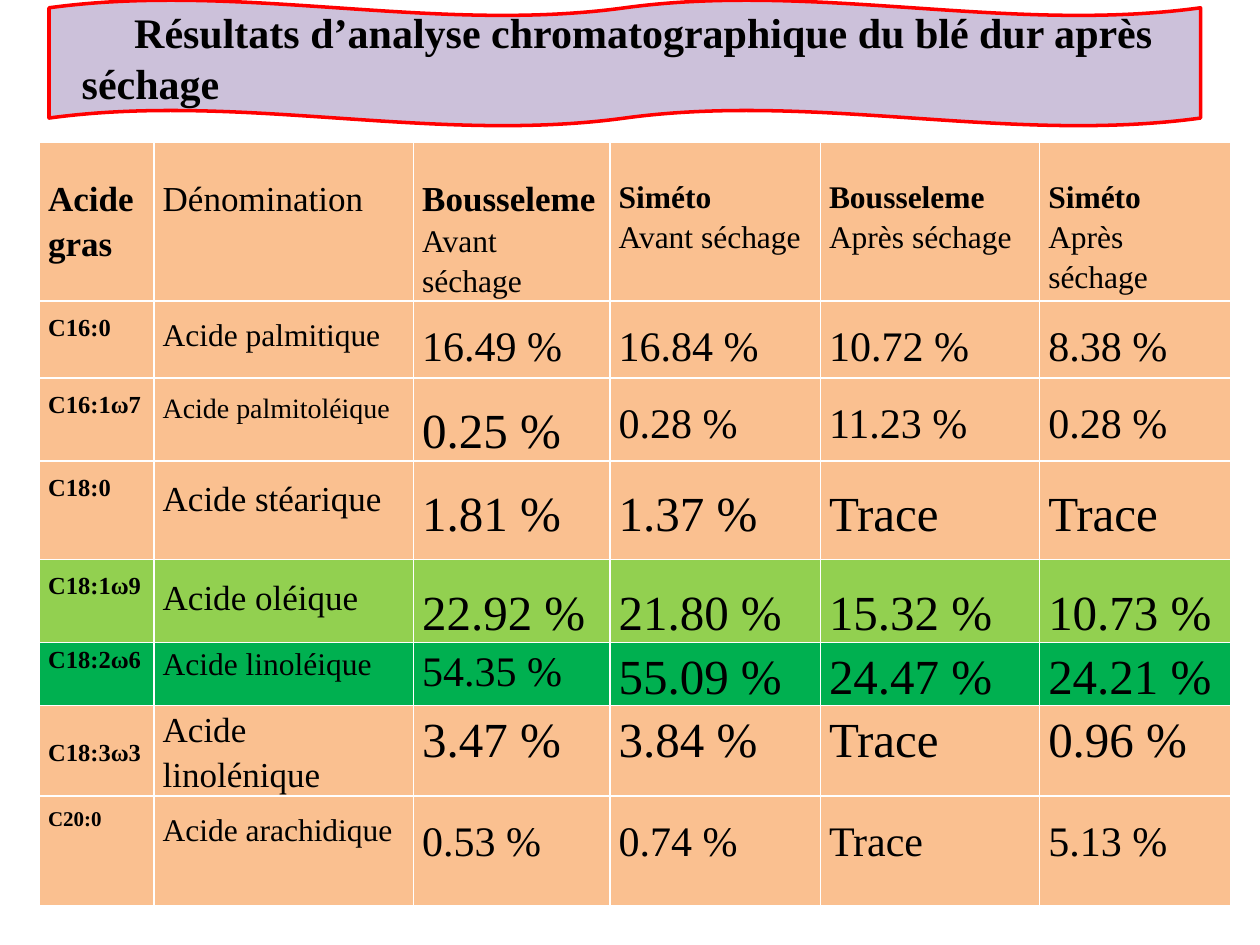
from lxml import etree
from pptx import Presentation
from pptx.dml.color import RGBColor
from pptx.enum.shapes import MSO_SHAPE
from pptx.enum.text import MSO_ANCHOR, MSO_AUTO_SIZE, PP_ALIGN
from pptx.oxml.ns import qn
from pptx.util import Pt

DOUBLE_WAVE = MSO_SHAPE.DOUBLE_WAVE
TOP, MIDDLE = MSO_ANCHOR.TOP, MSO_ANCHOR.MIDDLE
LEFT, JUSTIFY = PP_ALIGN.LEFT, PP_ALIGN.JUSTIFY
NO_AUTOFIT = MSO_AUTO_SIZE.NONE
TITLE_ONLY = 5

FONT = "Times New Roman"
COLORS = {
    "text": "000000",
    "border": "FFFFFF",
    "banner": "CCC1DA",
    "banner_line": "FF0000",
    "peach": "FAC090",
    "light_green": "92D050",
    "green": "00B050",
}

COLUMN_WIDTHS = [65.5, 148.3, 112.3, 120.2, 125.3, 109.4]
HEADER_HEIGHT = 90.7
HEADER_TOP_MARGIN = 18.5
# Each header cell holds lines of (text, size, bold).
HEADERS = [
    [("Acide gras", 20, True)],
    [("Dénomination", 20, False)],
    [("Bousseleme", 20, True), ("Avant séchage", 18, False)],
    [("Siméto", 18, True), ("Avant séchage", 18, False)],
    [("Bousseleme", 18, True), ("Après séchage", 18, False)],
    [("Siméto", 18, True), ("Après séchage", 18, False)],
]
# Height, fill, line spacing, texts, text sizes.
ROWS = [
    (43.9, "peach", 1.5,
     ["C16:0", "Acide palmitique", "16.49 %", "16.84 %", "10.72 %", "8.38 %"],
     [14, 18, 24, 24, 24, 24]),
    (47.5, "peach", 1.5,
     ["C16:1ω7", "Acide palmitoléique", "0.25 %", "0.28 %", "11.23 %", "0.28 %"],
     [14, 16, 28, 24, 24, 24]),
    (56.2, "peach", 1.5,
     ["C18:0", "Acide stéarique", "1.81 %", "1.37 %", "Trace", "Trace"],
     [14, 20, 28, 28, 28, 28]),
    (47.5, "light_green", 1.5,
     ["C18:1ω9", "Acide oléique", "22.92 %", "21.80 %", "15.32 %", "10.73 %"],
     [14, 20, 28, 28, 28, 28]),
    (36, "green", 1.15,
     ["C18:2ω6", "Acide linoléique", "54.35 %", "55.09 %", "24.47 %", "24.21 %"],
     [14, 18, 24, 28, 28, 28]),
    (51.8, "peach", 1.15,
     ["C18:3ω3", "Acide linolénique", "3.47 %", "3.84 %", "Trace", "0.96 %"],
     [14, 20, 28, 28, 28, 28]),
    (62.6, "peach", 1.5,
     ["C20:0", "Acide arachidique", "0.53 %", "0.74 %", "Trace", "5.13 %"],
     [12, 18, 24, 24, 24, 24]),
]


def rgb(name):
    return RGBColor.from_string(COLORS[name])


def write(para, text, size=18, bold=False, align=LEFT, spacing=1.0):
    para.alignment = align
    para.line_spacing = spacing
    span = para.add_run()
    span.text = text
    span.font.name = FONT
    span.font.size = Pt(size)
    span.font.bold = bold
    span.font.color.rgb = rgb("text")


def add_banner(page, left, top, width, height):
    """Place the wavy banner with the slide title in front of it."""
    wave = page.shapes.add_shape(
        DOUBLE_WAVE, Pt(left), Pt(top), Pt(width), Pt(height))
    wave.shadow.inherit = False
    wave.fill.solid()
    wave.fill.fore_color.rgb = rgb("banner")
    wave.line.color.rgb = rgb("banner_line")
    wave.line.width = Pt(2)

    title = page.shapes.title
    title.left, title.top = Pt(left + 11.5), Pt(top)
    title.width, title.height = Pt(width - 11.5), Pt(height - 6.5)
    frame = title.text_frame
    frame.word_wrap = True
    frame.auto_size = NO_AUTOFIT
    frame.vertical_anchor = MIDDLE
    para = frame.paragraphs[0]
    write(para, "Résultats d’analyse chromatographique du blé dur après séchage",
          size=24, bold=True)
    para._p.get_or_add_pPr().set("indent", str(Pt(30)))
    wave.element.addnext(title.element)


def set_borders(cell, width=1):
    properties = cell._tc.get_or_add_tcPr()
    for index, side in enumerate(("lnL", "lnR", "lnT", "lnB")):
        line = etree.Element(qn(f"a:{side}"), w=str(Pt(width)))
        fill = etree.SubElement(line, qn("a:solidFill"))
        etree.SubElement(fill, qn("a:srgbClr"), val=COLORS["border"])
        properties.insert(index, line)


def fill_cell(cell, lines, fill, spacing, top_margin=0, anchor=TOP):
    """Format a cell and write its lines of (text, size, bold)."""
    cell.margin_left = cell.margin_right = Pt(5)
    cell.margin_top, cell.margin_bottom = Pt(top_margin), Pt(0)
    cell.vertical_anchor = anchor
    cell.fill.solid()
    cell.fill.fore_color.rgb = rgb(fill)
    set_borders(cell)
    frame = cell.text_frame
    for index, (text, size, bold) in enumerate(lines):
        para = frame.add_paragraph() if index else frame.paragraphs[0]
        write(para, text, size=size, bold=bold, align=JUSTIFY, spacing=spacing)


def add_results_table(page, left, top):
    heights = [HEADER_HEIGHT] + [row[0] for row in ROWS]
    table = page.shapes.add_table(
        len(heights), len(COLUMN_WIDTHS), Pt(left), Pt(top),
        Pt(sum(COLUMN_WIDTHS)), Pt(sum(heights))).table
    for column, width in zip(table.columns, COLUMN_WIDTHS):
        column.width = Pt(width)
    for row, height in zip(table.rows, heights):
        row.height = Pt(height)

    for column, lines in enumerate(HEADERS):
        fill_cell(table.cell(0, column), lines, "peach", 1.15,
                  top_margin=HEADER_TOP_MARGIN)
    for number, (_, fill, spacing, texts, sizes) in enumerate(ROWS, start=1):
        for column, (text, size) in enumerate(zip(texts, sizes)):
            anchor = MIDDLE if text == "C18:3ω3" else TOP
            fill_cell(table.cell(number, column), [(text, size, column == 0)],
                      fill, spacing, anchor=anchor)


def main():
    deck = Presentation()
    deck.slide_width, deck.slide_height = Pt(720), Pt(540)
    page = deck.slides.add_slide(deck.slide_layouts[TITLE_ONLY])
    add_results_table(page, left=22.5, top=81.4)
    add_banner(page, left=28, top=0, width=658, height=72)
    deck.save("out.pptx")


if __name__ == "__main__":
    main()
